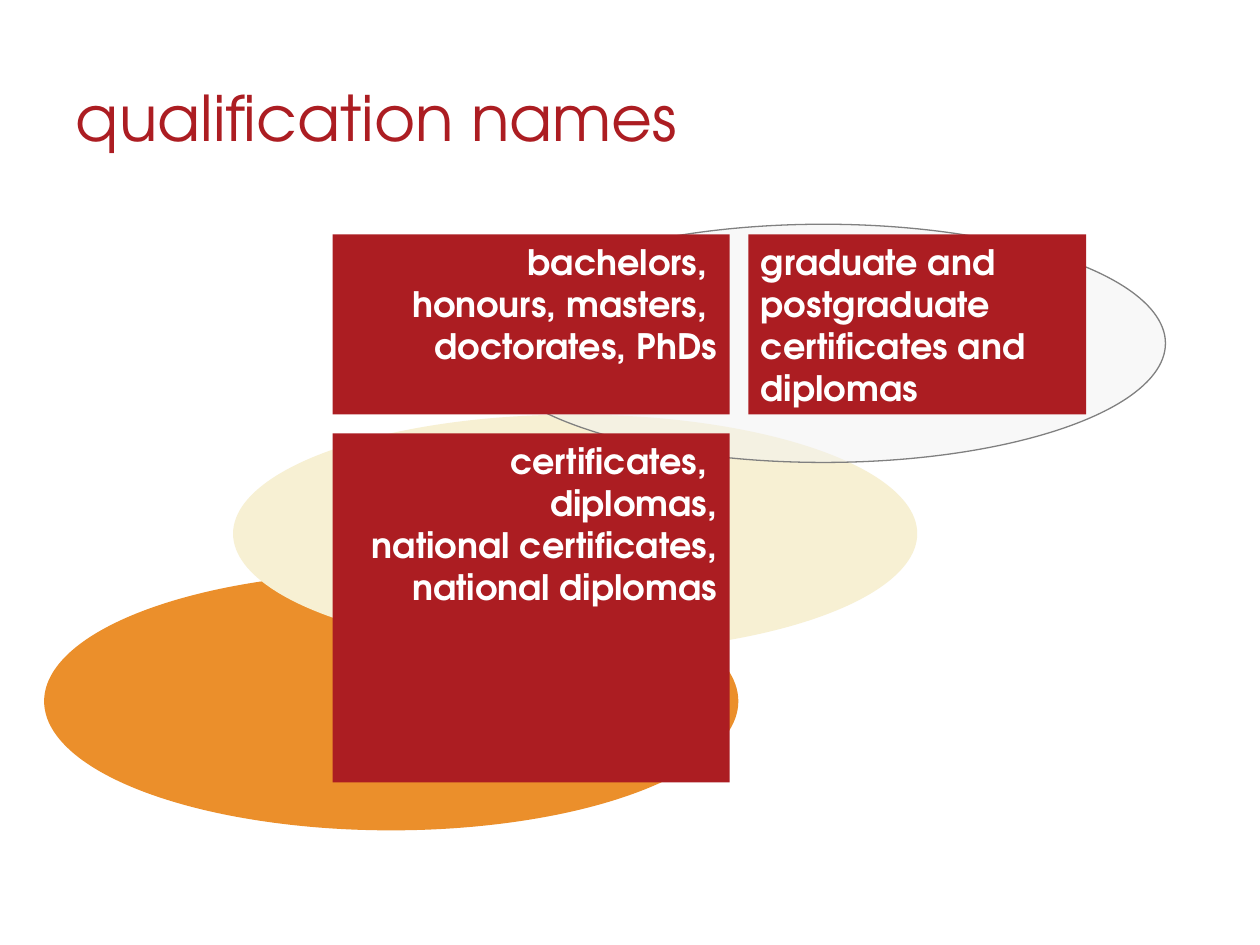
from pptx import Presentation
from pptx.dml.color import RGBColor
from pptx.enum import shapes, text
from pptx.oxml import parse_xml
from pptx.oxml.ns import nsdecls
from pptx.util import Inches, Pt

FONT = "TeX Gyre Adventor"
COLORS = {"red": "AC1D22", "orange": "EB8F2B", "cream": "F7F0D3",
          "pale": "F2F2F2", "grey": "808080", "white": "FFFFFF"}
LEFT, RIGHT = text.PP_ALIGN.LEFT, text.PP_ALIGN.RIGHT


def color(name):
    return RGBColor.from_string(COLORS[name])


def format_text(p, align, color_name, **font):
    p.alignment = align
    for r in p.runs:
        for key, value in {"name": FONT, **font}.items():
            setattr(r.font, key, value)
        r.font.color.rgb = color(color_name)


def add_title(s, words):
    sp = s.shapes.title
    box = {"left": 0.5, "top": 0.3, "width": 8.83, "height": 1.25}
    for key, value in box.items():
        setattr(sp, key, Inches(value))
    tf = sp.text_frame
    tf.text = words
    tf.vertical_anchor = text.MSO_ANCHOR.MIDDLE
    format_text(tf.paragraphs[0], LEFT, "red", size=Pt(36))


def add_filled(s, kind, box, fill):
    sp = s.shapes.add_shape(kind, *map(Inches, box))
    sp.shadow.inherit = False
    sp.fill.solid()
    sp.fill.fore_color.rgb = color(fill)
    sp.line.fill.background()
    return sp


def add_ellipse(s, box, fill, line=None, alpha=None):
    sp = add_filled(s, shapes.MSO_SHAPE.OVAL, box, fill)
    if line:
        sp.line.color.rgb = color(line)
        sp.line.width = Pt(0.75)
    if alpha:
        rgb = sp.fill._xPr.find(".//{*}solidFill/{*}srgbClr")
        rgb.append(parse_xml(f'<a:alpha {nsdecls("a")} val="{alpha * 1000}"/>'))


def add_box(s, box, words, align):
    sp = add_filled(s, shapes.MSO_SHAPE.RECTANGLE, box, "red")
    tf = sp.text_frame
    tf.word_wrap = True
    tf.vertical_anchor = text.MSO_ANCHOR.TOP
    p = tf.paragraphs[0]
    p.text = words
    format_text(p, align, "white", size=Pt(20), bold=True)


def main():
    prs = Presentation()
    prs.slide_width, prs.slide_height = Inches(10), Inches(7.5)
    s = prs.slides.add_slide(prs.slide_layouts[5])
    add_title(s, "qualification names")

    # Overlapping ellipses, back to front
    add_ellipse(s, (0.35, 4.54, 5.51, 2.05), "orange")
    add_ellipse(s, (1.85, 3.29, 5.43, 1.89), "cream")
    add_ellipse(s, (3.82, 1.78, 5.43, 1.89), "pale", line="grey", alpha=50)

    # Qualification boxes; \v is a line break within the paragraph
    x, y, width, height, gap = 2.64, 1.86, 3.15, 1.43, 0.15
    add_box(s, (x, y + height + gap, width, 2.77),
            "certificates, \vdiplomas,\v"
            "national certificates, national diplomas", RIGHT)
    add_box(s, (x, y, width, height),
            "bachelors, \vhonours, masters, \vdoctorates, PhDs", RIGHT)
    add_box(s, (x + width + gap, y, 2.68, height),
            "graduate and postgraduate certificates and diplomas", LEFT)

    prs.save("out.pptx")


if __name__ == "__main__":
    main()
